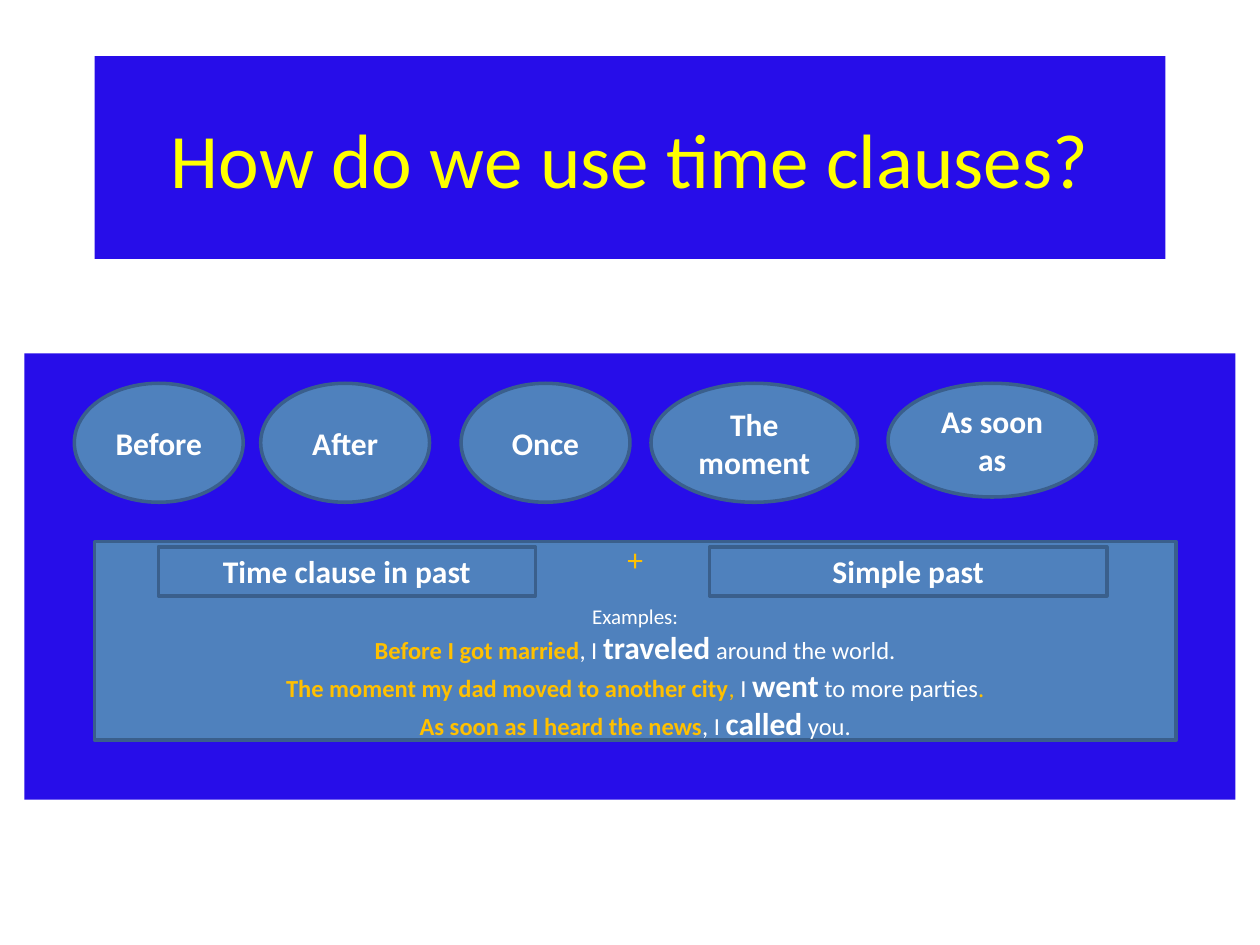
"""Build a slide on time clauses in the past."""
from pptx import Presentation
from pptx.dml.color import RGBColor
from pptx.enum import shapes, text
from pptx.util import Pt

COLORS = {"blue": "270DE9", "steel": "4F81BD", "edge": "3A5F8C",
          "yellow": "FFFF00", "gold": "FFC000", "white": "FFFFFF"}
FONT = "Calibri"
QUESTION = "How do we use time clauses?"
CONJUNCTIONS = [
    (["Before"], (42.5, 219, 96.5, 68)),
    (["After"], (149, 219, 96.5, 68)),
    (["Once"], (263.5, 219, 96.5, 68)),
    (["The", "moment"], (372, 219, 118, 68)),
    (["As soon as"], (507.5, 219, 119, 65)),
]
FORMULA = [
    (["Time clause in past"], (90.5, 312.5, 215.5, 28)),
    (["Simple past"], (405.5, 312.5, 227, 28)),
]
STYLES = {"plus": (18, "gold", False), "label": (12, "white", False),
          "clause": (14, "gold", True), "mark": (14, "gold", False),
          "plain": (14, "white", False), "verb": (18, "white", True)}
EXAMPLES = [
    [("plus", "+")],
    [("label", "Examples:")],
    [("clause", "Before I got married"), ("plain", ", I "),
     ("verb", "traveled"), ("plain", " around the world.")],
    [("clause", "The moment my dad moved to another city"), ("mark", ", "),
     ("plain", "I "), ("verb", "went"), ("plain", " to more parties"), ("mark", ".")],
    [("clause", "As soon as I heard the news"), ("plain", ", I "),
     ("verb", "called"), ("plain", " you.")],
]


def rgb(name):
    return RGBColor.from_string(COLORS[name])


def fill(shape, color):
    shape.fill.solid()
    shape.fill.fore_color.rgb = rgb(color)


def style(font, size, color, bold=False):
    font.name, font.size, font.bold = FONT, Pt(size), bold
    font.color.rgb = rgb(color)


def add_block(slide, kind, box, color="steel", edge="edge"):
    block = slide.shapes.add_shape(kind, *map(Pt, box))
    block.shadow.inherit = False
    fill(block, color)
    if edge:
        block.line.color.rgb = rgb(edge)
        block.line.width = Pt(2)
    else:
        block.line.fill.background()
    block.text_frame.vertical_anchor = text.MSO_ANCHOR.MIDDLE
    return block


def paragraphs(frame, count):
    for index in range(count):
        paragraph = frame.add_paragraph() if index else frame.paragraphs[0]
        paragraph.alignment = text.PP_ALIGN.CENTER
        yield paragraph


def add_labels(slide, kind, labels):
    for lines, box in labels:
        frame = add_block(slide, kind, box).text_frame
        for paragraph, line in zip(paragraphs(frame, len(lines)), lines):
            paragraph.text = line
            style(paragraph.font, 18, "white", True)


def add_question(slide):
    question = slide.shapes.title
    question.left, question.top, question.width, question.height = map(
        Pt, (54, 32, 612, 116))
    fill(question, "blue")
    question.text_frame.text = QUESTION
    question.text_frame.vertical_anchor = text.MSO_ANCHOR.MIDDLE
    paragraph = question.text_frame.paragraphs[0]
    paragraph.alignment = text.PP_ALIGN.CENTER
    style(paragraph.font, 44, "yellow")


def add_examples(slide, kind):
    frame = add_block(slide, kind, (54, 309.5, 618, 113.5)).text_frame
    for paragraph, pieces in zip(paragraphs(frame, len(EXAMPLES)), EXAMPLES):
        for name, words in pieces:
            run = paragraph.add_run()
            run.text = words
            style(run.font, *STYLES[name])
    frame.paragraphs[0].space_after = Pt(14.5)


def main():
    deck = Presentation()
    deck.slide_width, deck.slide_height = Pt(720), Pt(540)
    slide = deck.slides.add_slide(deck.slide_layouts[5])
    rectangle, oval = shapes.MSO_SHAPE.RECTANGLE, shapes.MSO_SHAPE.OVAL
    add_question(slide)
    add_block(slide, rectangle, (14, 202, 692, 255), "blue", None)
    add_labels(slide, oval, CONJUNCTIONS)
    add_examples(slide, rectangle)
    add_labels(slide, rectangle, FORMULA)
    deck.save("out.pptx")


if __name__ == "__main__":
    main()
